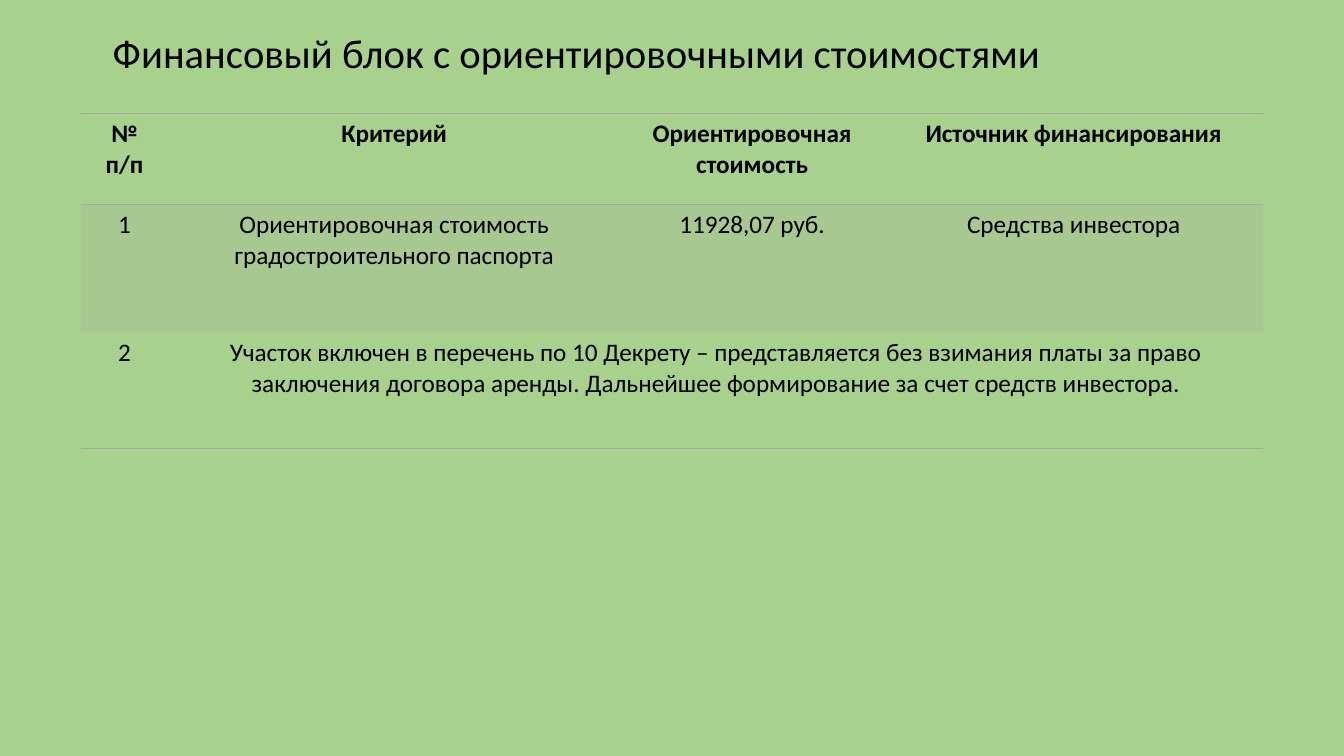
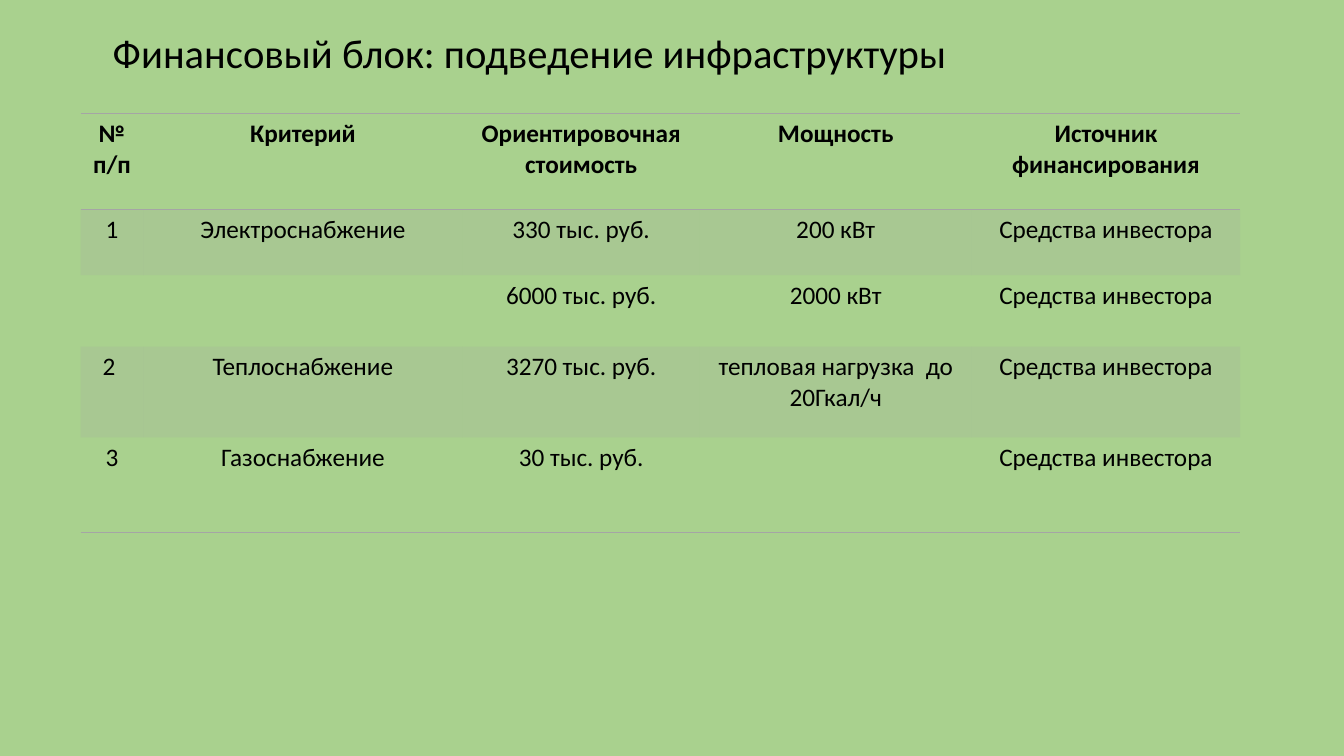
from pptx import Presentation
from pptx import util as u
from pptx.dml.color import RGBColor
from pptx.enum import text
from pptx.oxml.ns import qn
from lxml import etree

HUES = {"back": "A9D18E", "ink": "000000", "grey": "A5A5A5"}
FONT = "Calibri"
PLAIN = "{2D5ABB26-0587-4C30-8999-92F81FD0307C}"  # table style without grid
FUNDS = "Средства инвестора"
COST = "Ориентировочная стоимость"
SOURCE = "Источник финансирования"

COSTS = {
    "title": "Финансовый блок с ориентировочными стоимостями",
    "cols": [0.87, 4.48, 2.62, 3.76],
    "highs": [0.9, 1.27, 1.15],
    "rows": [
        ["№ п/п", "Критерий", COST, SOURCE],
        ["1", "Ориентировочная стоимость градостроительного паспорта",
         "11928,07 руб.", FUNDS],
        ["2", "Участок включен в перечень по 10 Декрету – представляется "
         "без взимания платы за право заключения договора аренды. "
         "Дальнейшее формирование за счет средств инвестора.", None, None],
    ],
}
SUPPLY = {
    "title": "Финансовый блок: подведение инфраструктуры",
    "cols": [0.62, 3.17, 2.35, 2.7, 2.66],
    "highs": [0.95, 0.65, 0.71, 0.9, 0.94],
    "rows": [
        ["№ п/п", "Критерий", COST, "Мощность", SOURCE],
        ["1", "Электроснабжение", "330 тыс. руб.", "200 кВт", FUNDS],
        ["", "", "6000 тыс. руб.", "2000 кВт", FUNDS],
        ["2 ", "Теплоснабжение", "3270 тыс. руб.",
         "тепловая нагрузка  до 20Гкал/ч", FUNDS],
        ["3", "Газоснабжение", "30 тыс. руб.", "", FUNDS],
    ],
}


def paint(fill, name):
    fill.solid()
    fill.fore_color.rgb = RGBColor.from_string(HUES[name])


def style(para, size, bold=False):
    font = para.font
    font.name, font.size, font.bold = FONT, u.Pt(size), bold
    font.color.rgb = RGBColor.from_string(HUES["ink"])


def add_title(slide, words, box):
    frame = slide.shapes.add_textbox(*map(u.Inches, box)).text_frame
    frame.word_wrap = True
    frame.vertical_anchor = text.MSO_ANCHOR.MIDDLE
    para = frame.paragraphs[0]
    para.text = words
    para.line_spacing = 0.9
    style(para, 29)


def add_rule(cell, side):
    """Draw a thin grey border on one side: lnT or lnB."""
    props = cell._tc.get_or_add_tcPr()
    line = etree.SubElement(props, qn("a:" + side), w=str(u.Pt(1)))
    solid = etree.SubElement(line, qn("a:solidFill"))
    etree.SubElement(solid, qn("a:srgbClr"), val=HUES["grey"])


def shade(cell):
    """Fill the cell with grey at 20% opacity."""
    paint(cell.fill, "grey")
    hue = cell._tc.tcPr.find(".//" + qn("a:srgbClr"))
    etree.SubElement(hue, qn("a:alpha"), val="20000")


def add_grid(slide, data, left, top):
    """Place a table; None in a row extends the cell before it."""
    rows, cols, highs = data["rows"], data["cols"], data["highs"]
    size = (left, top, sum(cols), sum(highs))
    table = slide.shapes.add_table(
        len(rows), len(cols), *map(u.Inches, size)).table
    table.first_row = table.horz_banding = False
    table._tbl.tblPr.find(qn("a:tableStyleId")).text = PLAIN
    for col, wide in zip(table.columns, cols):
        col.width = u.Inches(wide)
    for r, (row, high) in enumerate(zip(rows, highs)):
        table.rows[r].height = u.Inches(high)
        for c, words in enumerate(row):
            cell = table.cell(r, c)
            if r == 0:
                add_rule(cell, "lnT")
            if r in (0, len(rows) - 1):
                add_rule(cell, "lnB")
            if r % 2:
                shade(cell)
            else:
                cell.fill.background()
            if words:
                para = cell.text_frame.paragraphs[0]
                para.text = words
                para.alignment = text.PP_ALIGN.CENTER
                style(para, 18, r == 0)
        if None in row:
            start = row.index(None) - 1
            table.cell(r, start).merge(table.cell(r, len(row) - 1))


def add_page(deck, data):
    slide = deck.slides.add_slide(deck.slide_layouts[6])
    paint(slide.background.fill, "back")
    add_title(slide, data["title"], (1.02, 0.13, 11.5, 0.84))
    add_grid(slide, data, 0.8, 1.13)


def main():
    deck = Presentation()
    deck.slide_width, deck.slide_height = u.Inches(13.33), u.Inches(7.5)
    for data in (COSTS, SUPPLY):
        add_page(deck, data)
    deck.save("out.pptx")


if __name__ == "__main__":
    main()
